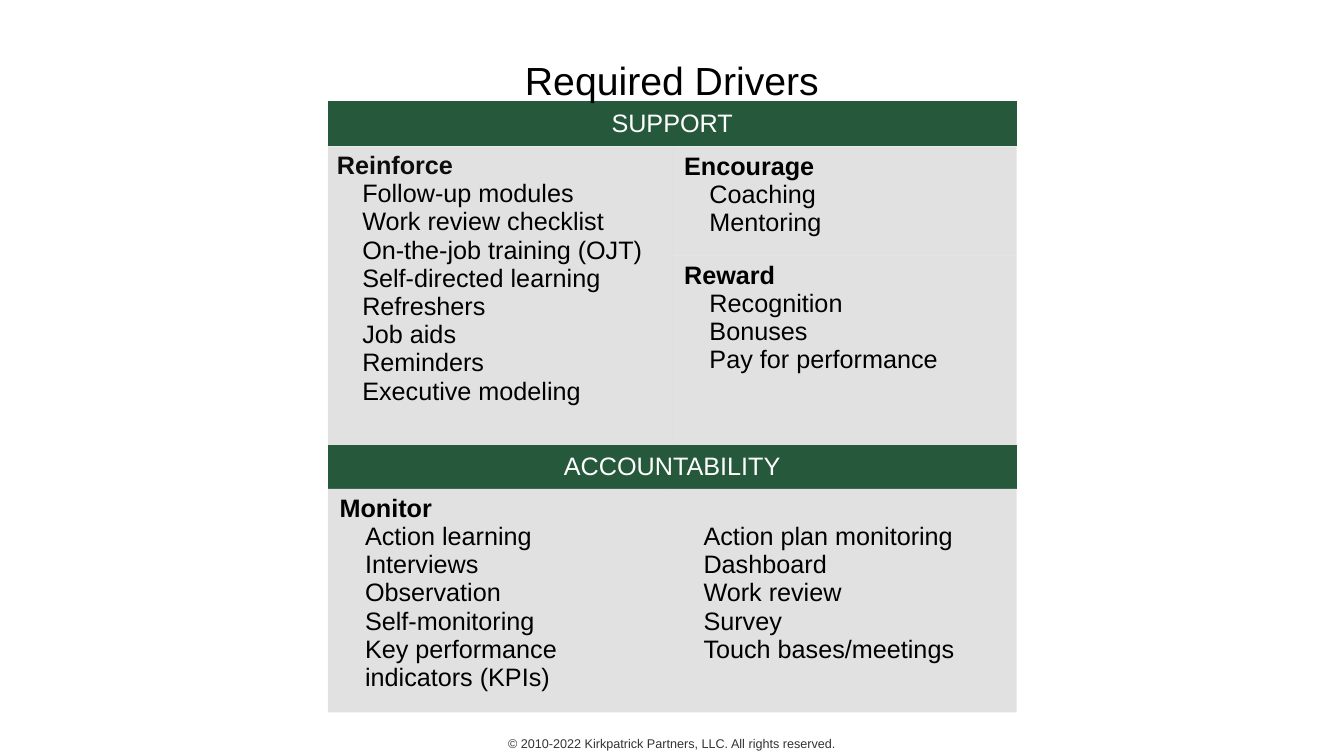
from dataclasses import dataclass

from lxml import etree
from pptx import Presentation
from pptx import util as u
from pptx.dml.color import RGBColor
from pptx.enum import text
from pptx.oxml.ns import qn


@dataclass(frozen=True)
class Theme:
    font: str = "Arial"
    green: str = "26583B"
    grey: str = "C4C4C4"
    black: str = "000000"
    heading: str = "0D0D0D"
    white: str = "FFFFFF"
    footer: str = "333333"
    title_size: int = 28
    body_size: int = 18
    footer_size: int = 9


THEME = Theme()
PLAIN_TABLE = "{2D5ABB26-0587-4C30-8999-92F81FD0307C}"
LEFT = u.Cm(8.26)
NARROW, WIDE = (0.23, 0.13), (0.3, 0.15)

REINFORCE = ["Follow-up modules", "Work review checklist", "On-the-job training (OJT)",
             "Self-directed learning", "Refreshers", "Job aids", "Reminders",
             "Executive modeling"]
ENCOURAGE = ["Coaching", "Mentoring"]
REWARD = ["Recognition", "Bonuses", "Pay for performance"]
MONITOR = ["Action learning", "Interviews", "Observation", "Self-monitoring",
           "Key performance indicators (KPIs)"]
MONITOR_MORE = ["Action plan monitoring", "Dashboard", "Work review", "Survey",
                "Touch bases/meetings"]


def write(para, words, size=THEME.body_size, color=THEME.black, bold=False,
          align=text.PP_ALIGN.LEFT, indent=0):
    para.alignment = align
    if indent:
        para._p.get_or_add_pPr().set("marL", str(u.Cm(indent)))
    span = para.add_run()
    span.text = words
    span.font.name = THEME.font
    span.font.size = u.Pt(size)
    span.font.bold = bold
    span.font.color.rgb = RGBColor.from_string(color)


def fill_cell(cell, color, margins, opacity=100):
    cell.fill.solid()
    cell.fill.fore_color.rgb = RGBColor.from_string(color)
    if opacity < 100:
        tint = cell._tc.tcPr.find(".//" + qn("a:srgbClr"))
        etree.SubElement(tint, qn("a:alpha")).set("val", str(opacity * 1000))
    side, edge = margins
    cell.margin_left = cell.margin_right = u.Cm(side)
    cell.margin_top = cell.margin_bottom = u.Cm(edge)


def add_driver_table(page, top, columns, rows, banner):
    """Add an unstyled table whose first row is one merged banner."""
    frame = page.shapes.add_table(len(rows), len(columns), LEFT, u.Cm(top),
                                  u.Cm(sum(columns)), u.Cm(sum(rows)))
    table = frame.table
    table._tbl.tblPr.find(qn("a:tableStyleId")).text = PLAIN_TABLE
    table.first_row = table.horz_banding = False
    for column, width in zip(table.columns, columns):
        column.width = u.Cm(width)
    for row, height in zip(table.rows, rows):
        row.height = u.Cm(height)
    head = table.cell(0, 0)
    head.merge(table.cell(0, len(columns) - 1))
    fill_cell(head, THEME.green, NARROW)
    head.vertical_anchor = text.MSO_ANCHOR.MIDDLE
    write(head.text_frame.paragraphs[0], banner, color=THEME.white,
          align=text.PP_ALIGN.CENTER)
    return table


def fill_list(cell, items, heading=None, margins=WIDE, color=THEME.black):
    fill_cell(cell, THEME.grey, margins, opacity=50)
    lines = [(item, {"indent": 0.64}) for item in items]
    if heading:
        lines.insert(0, (heading, {"bold": True, "color": color}))
    for number, (words, style) in enumerate(lines):
        frame = cell.text_frame
        para = frame.add_paragraph() if number else frame.paragraphs[0]
        write(para, words, **style)


def add_title(page, words):
    title = page.shapes.title
    title.left, title.top = u.Cm(1.69), u.Cm(0.43)
    title.width, title.height = u.Cm(30.48), u.Cm(3.18)
    title.text_frame.vertical_anchor = text.MSO_ANCHOR.MIDDLE
    write(title.text_frame.paragraphs[0], words, size=THEME.title_size,
          align=text.PP_ALIGN.CENTER)
    page.shapes._spTree.append(title._element)  # in front of the tables


def add_footer(page, words):
    box = page.shapes.add_textbox(u.Cm(10.16), u.Cm(18.42), u.Cm(13.54), u.Cm(0.64))
    box.text_frame.word_wrap = True
    write(box.text_frame.paragraphs[0], words, size=THEME.footer_size,
          color=THEME.footer, align=text.PP_ALIGN.CENTER)


def main():
    deck = Presentation()
    deck.slide_width, deck.slide_height = u.Cm(33.87), u.Cm(19.05)
    page = deck.slides.add_slide(deck.slide_layouts[5])
    add_footer(page, "© 2010-2022 Kirkpatrick Partners, LLC. All rights reserved.")

    support = add_driver_table(page, 2.54, [8.68, 8.68], [1.15, 2.75, 4.78], "SUPPORT")
    reinforce = support.cell(1, 0)
    reinforce.merge(support.cell(2, 0))
    fill_list(reinforce, REINFORCE, "Reinforce", NARROW, THEME.heading)
    fill_list(support.cell(1, 1), ENCOURAGE, "Encourage")
    fill_list(support.cell(2, 1), REWARD, "Reward")

    account = add_driver_table(page, 11.22, [8.53, 8.83], [1.09, 5.64], "ACCOUNTABILITY")
    fill_list(account.cell(1, 0), MONITOR, "Monitor")
    more = account.cell(1, 1)
    fill_list(more, MONITOR_MORE)
    more.margin_top = u.Cm(0.86)  # level with the items beside it

    add_title(page, "Required Drivers")
    deck.save("out.pptx")


if __name__ == "__main__":
    main()
